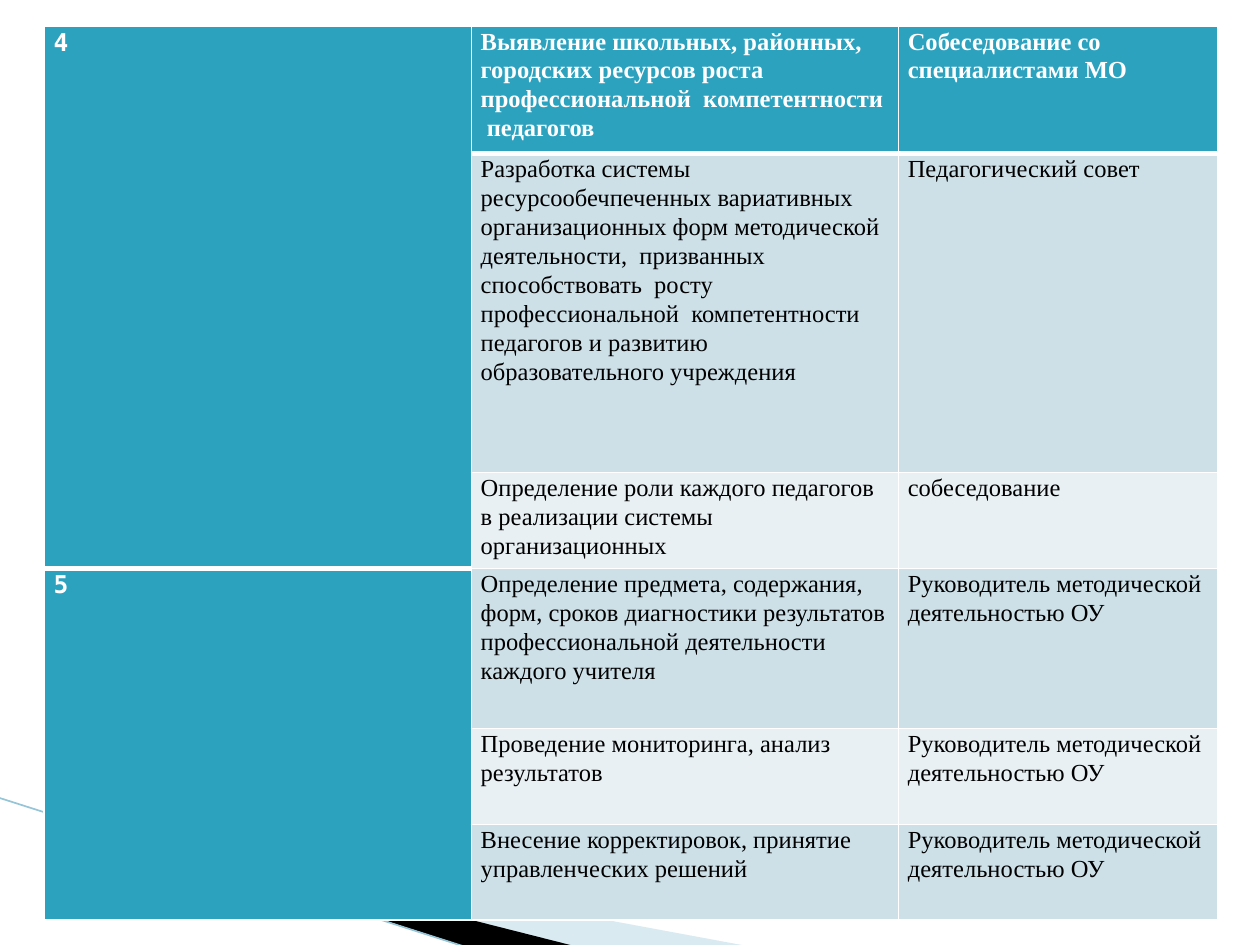
from lxml import etree
from pptx import Presentation
from pptx import util as u
from pptx.dml.color import RGBColor
from pptx.enum import shapes
from pptx.oxml import ns

COLORS = {
    "white": "FFFFFF", "black": "000000", "teal": "2DA2BF",
    "band": "CDE0E8", "light_band": "E8F0F4",
    "wedge": "A0CBDC", "edge": "97C5D8",
}
SERIF, MONO = "Times New Roman", "DejaVu Sans Mono"
THIN, THICK = 1, 3
COLUMNS = [8.61, 8.61, 6.43]
ROWS = [2.57, 6.43, 1.93, 3.23, 1.93, 1.93]
STAGE_ROWS = 3
LEADER = "Руководитель методической деятельностью ОУ"
STAGES = ["4", "5"]
TASKS = [
    ("Выявление школьных, районных, городских ресурсов роста "
     "профессиональной  компетентности  педагогов",
     "Собеседование со специалистами МО"),
    ("Разработка системы ресурсообечпеченных вариативных  организационных форм "
     "методической деятельности,  призванных способствовать  росту "
     "профессиональной  компетентности педагогов и развитию "
     "образовательного учреждения",
     "Педагогический совет"),
    ("Определение роли каждого педагогов в реализации системы  организационных",
     "собеседование"),
    ("Определение предмета, содержания, форм, сроков диагностики результатов "
     "профессиональной деятельности каждого учителя", LEADER),
    ("Проведение мониторинга, анализ результатов", LEADER),
    ("Внесение корректировок, принятие управленческих решений", LEADER),
]


def color(name):
    return RGBColor.from_string(COLORS[name])


class SlideBuilder:
    def __init__(self, page):
        self.page = page
        self.size = u.Pt(14)

    def wedge(self, points, fill, opacity=None):
        corners = [(u.Cm(x), u.Cm(y)) for x, y in points]
        builder = self.page.shapes.build_freeform(*corners[0])
        builder.add_line_segments(corners[1:], close=True)
        shape = builder.convert_to_shape()
        shape.shadow.inherit = False
        shape.fill.solid()
        shape.fill.fore_color.rgb = color(fill)
        shape.line.fill.background()
        if opacity is not None:
            tint = shape._element.spPr.find(".//" + ns.qn("a:srgbClr"))
            etree.SubElement(tint, ns.qn("a:alpha"), val=str(opacity * 1000))

    def line(self, start, end, stroke, width):
        ends = [u.Cm(value) for value in start + end]
        line = self.page.shapes.add_connector(shapes.MSO_CONNECTOR.STRAIGHT, *ends)
        line.line.color.rgb = color(stroke)
        line.line.width = u.Pt(width)
        etree.SubElement(line._element.spPr, ns.qn("a:effectLst"))

    def table(self, left, top, columns, rows):
        frame = self.page.shapes.add_table(
            len(rows), len(columns), u.Cm(left), u.Cm(top),
            u.Cm(sum(columns)), u.Cm(sum(rows)))
        for column, width in zip(frame.table.columns, columns):
            column.width = u.Cm(width)
        for row, height in zip(frame.table.rows, rows):
            row.height = u.Cm(height)
        return frame.table

    def borders(self, cell, top, bottom):
        properties = cell._tc.get_or_add_tcPr()
        for side, width in (("L", THIN), ("R", THIN), ("T", top), ("B", bottom)):
            edge = etree.SubElement(properties, ns.qn("a:ln" + side),
                                    w=str(u.Pt(width)))
            fill = etree.SubElement(edge, ns.qn("a:solidFill"))
            etree.SubElement(fill, ns.qn("a:srgbClr"), val=COLORS["white"])

    def cell(self, cell, fill):
        cell.fill.solid()
        cell.fill.fore_color.rgb = color(fill)
        cell.margin_left = cell.margin_right = u.Cm(0.19)
        cell.margin_top = cell.margin_bottom = 0

    def cell_text(self, cell, words, font, ink, bold):
        cell.text_frame.text = words
        para = cell.text_frame.paragraphs[0]
        para.line_spacing = 1.07
        span = para.runs[0].font
        span.name, span.size, span.bold = font, self.size, bold
        span.color.rgb = color(ink)


def fill_plan(builder, table):
    for row, entries in enumerate(TASKS):
        header = row == 0
        stage, step = divmod(row, STAGE_ROWS)
        band = "teal" if header else "band" if row % 2 else "light_band"
        for column in range(len(COLUMNS)):
            cell = table.cell(row, column)
            if column == 0:
                top = THICK if row == STAGE_ROWS else THIN
                bottom = THICK if stage == 0 else THIN
            else:
                top = THICK if row == 1 else THIN
                bottom = THICK if header else THIN
            builder.borders(cell, top, bottom)
            builder.cell(cell, band if column else "teal")
            if column:
                builder.cell_text(cell, entries[column - 1], SERIF,
                                  "white" if header else "black", header)
            elif step == 0:
                builder.cell_text(cell, STAGES[stage], MONO, "white", True)
    for first in range(0, len(TASKS), STAGE_ROWS):
        table.cell(first, 0).merge(table.cell(first + STAGE_ROWS - 1, 0))


def main():
    deck = Presentation()
    deck.slide_width, deck.slide_height = u.Cm(25.4), u.Cm(19.05)
    builder = SlideBuilder(deck.slides.add_slide(deck.slide_layouts[6]))
    builder.wedge([(1.4, 16.54), (15.11, 19.08), (11.58, 19.08), (1.4, 16.51)],
                  "wedge", opacity=40)
    builder.wedge([(1.35, 16.48), (11.61, 19.08), (9.45, 19.1), (1.37, 16.51)],
                  "black")
    builder.line((-0.03, 16.08), (9.42, 19.1), "edge", 0.95)
    fill_plan(builder, builder.table(0.89, 0.53, COLUMNS, ROWS))
    deck.save("out.pptx")


if __name__ == "__main__":
    main()
